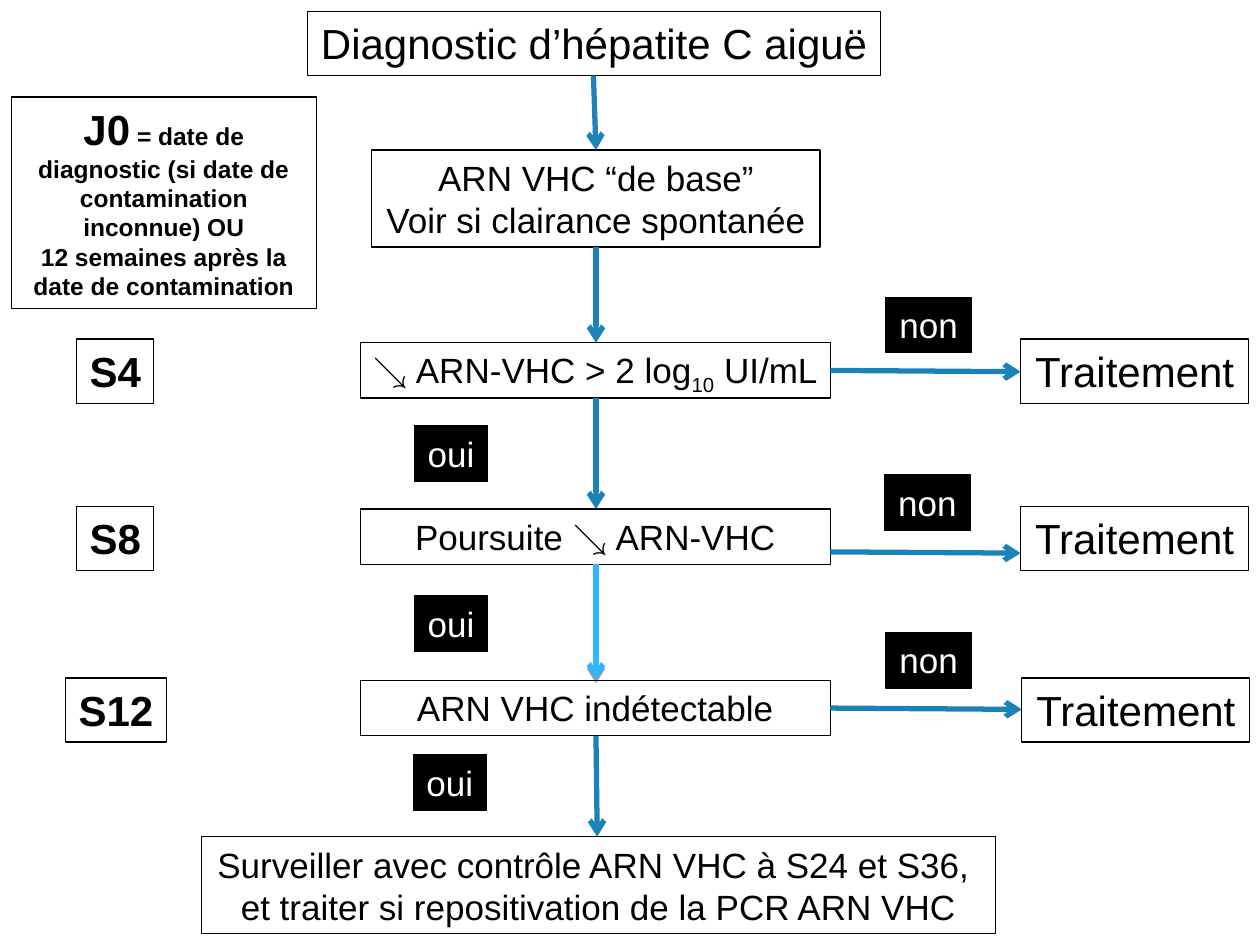
from collections import namedtuple
from dataclasses import dataclass

from lxml.etree import SubElement
from pptx import Presentation
from pptx.dml.color import RGBColor
from pptx.enum.shapes import MSO_CONNECTOR, MSO_SHAPE
from pptx.enum.text import MSO_ANCHOR, MSO_AUTO_SIZE, PP_ALIGN
from pptx.oxml.ns import qn
from pptx.util import Inches, Pt


@dataclass(frozen=True)
class Theme:
    font: str = "Arial"
    ink: RGBColor = RGBColor(0, 0, 0)
    paper: RGBColor = RGBColor(255, 255, 255)
    arrow: RGBColor = RGBColor(0x1C, 0x83, 0xB9)
    bright_arrow: RGBColor = RGBColor(0x31, 0xB6, 0xFD)
    large: int = 24
    medium: int = 20
    small: int = 14
    border: float = 0.75
    arrow_width: float = 3


THEME = Theme()

# The slide is a grid of 100 columns by 75 rows
SLIDE_WIDTH, SLIDE_HEIGHT = Inches(10), Inches(7.5)
COLUMNS, ROWS = 100, 75
AXIS = 47.3
STEP_LEFT, STEP_WIDTH, STEP_HEIGHT = 28.6, 37.3, 4.4
STEP_RIGHT = STEP_LEFT + STEP_WIDTH
LARGE_HEIGHT, DOUBLE_HEIGHT = 5.1, 7.7
BASE_TOP, FINAL_TOP = 11.9, 66.4

Run = namedtuple("Run", "text size bold baseline", defaults=(THEME.medium, False, 0))
Week = namedtuple(
    "Week",
    "label label_left label_width top step step_top wraps "
    "treatment_left no_left no_top no_arrow yes_left yes_top",
)

WEEKS = [
    Week("S4", 6.1, 6.1, 26.9,
         [Run("↘ ARN-VHC > 2 log"), Run("10", baseline=-25000), Run(" UI/mL")],
         27.2, False, 81, 70.3, 23.6, 29.4, 32.9, 33.8),
    Week("S8", 6.1, 6.1, 40.2, [Run("Poursuite ↘ ARN-VHC")],
         40.4, True, 81, 70.2, 37.7, 43.8, 32.9, 47.3),
    Week("S12", 5.2, 8, 53.8, [Run("ARN VHC indétectable")],
         54, True, 81.1, 70.3, 50.2, 56.2, 32.8, 59.9),
]


def across(columns):
    return round(SLIDE_WIDTH * columns / COLUMNS)


def down(rows):
    return round(SLIDE_HEIGHT * rows / ROWS)


def add_box(slide, left, top, width, height, paragraphs,
            wraps=False, dark=False, anchor=MSO_ANCHOR.TOP):
    """Add a bordered box; each paragraph is a list of runs."""
    shape = slide.shapes.add_shape(
        MSO_SHAPE.RECTANGLE, across(left), down(top), across(width), down(height))
    shape.shadow.inherit = False
    if dark:
        shape.fill.solid()
        shape.fill.fore_color.rgb = THEME.ink
    else:
        shape.fill.background()
    shape.line.color.rgb = THEME.ink
    shape.line.width = Pt(THEME.border)

    frame = shape.text_frame
    frame.word_wrap = wraps
    frame.auto_size = MSO_AUTO_SIZE.SHAPE_TO_FIT_TEXT
    frame.vertical_anchor = anchor
    for index, runs in enumerate(paragraphs):
        paragraph = frame.add_paragraph() if index else frame.paragraphs[0]
        paragraph.alignment = PP_ALIGN.CENTER
        for item in runs:
            add_run(paragraph, item, THEME.paper if dark else THEME.ink)


def add_run(paragraph, item, color):
    run = paragraph.add_run()
    run.text = item.text
    run.font.name = THEME.font
    run.font.size = Pt(item.size)
    run.font.bold = item.bold
    run.font.color.rgb = color
    if item.baseline:
        run._r.get_or_add_rPr().set("baseline", str(item.baseline))


def add_arrow(slide, start, end, color=THEME.arrow, shadow=False):
    connector = slide.shapes.add_connector(
        MSO_CONNECTOR.STRAIGHT,
        across(start[0]), down(start[1]), across(end[0]), down(end[1]))
    connector.line.color.rgb = color
    connector.line.width = Pt(THEME.arrow_width)
    SubElement(connector.line._get_or_add_ln(), qn("a:tailEnd"), type="arrow")
    effects = SubElement(connector._element.spPr, qn("a:effectLst"))
    if shadow:
        outer = SubElement(effects, qn("a:outerShdw"), blurRad="0",
                           dist=str(Pt(1.6)), dir="5400000", rotWithShape="0")
        tint = SubElement(outer, qn("a:srgbClr"), val=str(THEME.ink))
        SubElement(tint, qn("a:alpha"), val="38000")


def add_answer(slide, text, left, top, width, anchor=MSO_ANCHOR.TOP):
    add_box(slide, left, top, width, STEP_HEIGHT, [[Run(text)]],
            dark=True, anchor=anchor)


def add_week(slide, week):
    """Add one decision row: week, test, treatment and both answers."""
    add_box(slide, week.label_left, week.top, week.label_width, LARGE_HEIGHT,
            [[Run(week.label, THEME.large, True)]])
    add_box(slide, STEP_LEFT, week.step_top, STEP_WIDTH, STEP_HEIGHT,
            [week.step], wraps=week.wraps)
    add_box(slide, week.treatment_left, week.top, 18.1, LARGE_HEIGHT,
            [[Run("Traitement", THEME.large)]])
    add_arrow(slide, (STEP_RIGHT, week.no_arrow),
              (week.treatment_left, week.no_arrow + 0.1))
    add_answer(slide, "non", week.no_left, week.no_top, 6.8)
    add_answer(slide, "oui", week.yes_left, week.yes_top, 5.8, MSO_ANCHOR.MIDDLE)


def add_opening(slide):
    # Definition of day zero
    add_box(slide, 0.9, 7.7, 24.2, 16.8, [
        [Run("J0", THEME.large, True),
         Run(" = date de diagnostic (si date de contamination inconnue) OU",
             THEME.small, True)],
        [Run("12 semaines après la date de contamination", THEME.small, True)],
    ], wraps=True)
    # Diagnosis and baseline test
    add_box(slide, 24.4, 0.9, 45.5, LARGE_HEIGHT,
            [[Run("Diagnostic d’hépatite C aiguë", THEME.large)]])
    add_box(slide, 29.5, BASE_TOP, 35.6, DOUBLE_HEIGHT,
            [[Run("ARN VHC “de base”")], [Run("Voir si clairance spontanée")]])


def add_follow_up(slide):
    add_box(slide, 16, FINAL_TOP, 63, DOUBLE_HEIGHT, [
        [Run("Surveiller avec contrôle ARN VHC à S24 et S36, ")],
        [Run("et traiter si repositivation de la PCR ARN VHC")],
    ], anchor=MSO_ANCHOR.MIDDLE)


def add_main_path(slide):
    """Link the boxes of the central column from top to bottom."""
    add_arrow(slide, (47.1, 6), (AXIS, BASE_TOP))
    add_arrow(slide, (AXIS, BASE_TOP + DOUBLE_HEIGHT), (AXIS, WEEKS[0].step_top))
    for week, following in zip(WEEKS, WEEKS[1:]):
        last = following is WEEKS[-1]
        add_arrow(slide, (AXIS, week.step_top + STEP_HEIGHT),
                  (AXIS, following.step_top),
                  THEME.bright_arrow if last else THEME.arrow, shadow=last)
    add_arrow(slide, (AXIS, WEEKS[-1].step_top + STEP_HEIGHT),
              (AXIS + 0.1, FINAL_TOP))


def main():
    presentation = Presentation()
    presentation.slide_width = SLIDE_WIDTH
    presentation.slide_height = SLIDE_HEIGHT
    slide = presentation.slides.add_slide(presentation.slide_layouts[6])
    add_opening(slide)
    for week in WEEKS:
        add_week(slide, week)
    add_follow_up(slide)
    add_main_path(slide)
    presentation.save("out.pptx")


if __name__ == "__main__":
    main()
